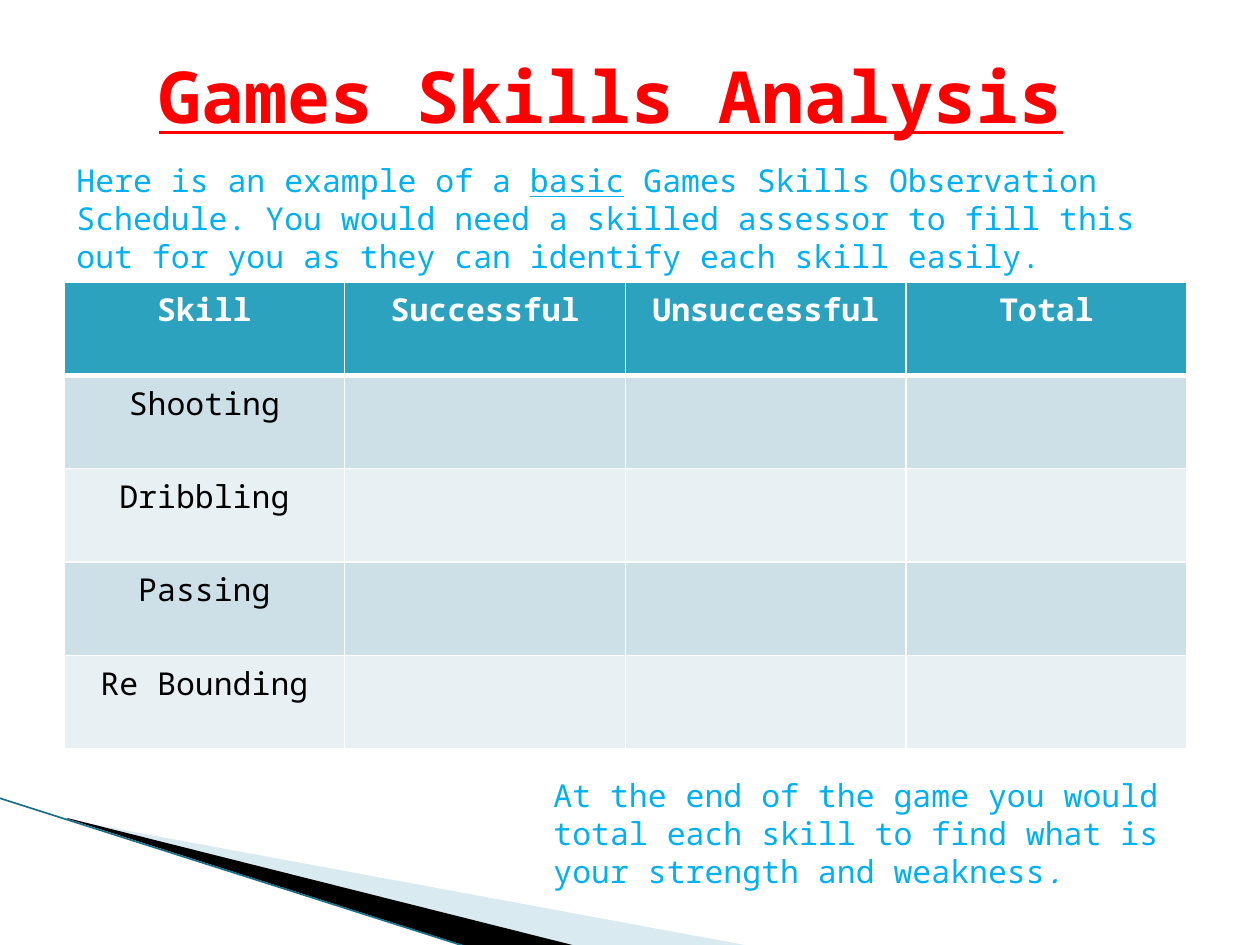
from lxml.etree import SubElement
from pptx import Presentation
from pptx.dml.color import RGBColor
from pptx.enum.shapes import MSO_CONNECTOR
from pptx.enum.text import MSO_ANCHOR, MSO_AUTO_SIZE, PP_ALIGN
from pptx.oxml import parse_xml
from pptx.oxml.ns import nsdecls, qn
from pptx.util import Pt

PX = 914400 / 126
FONT = "Noto Sans Mono"
RED = RGBColor(0xFF, 0x00, 0x00)
SKY = RGBColor(0x00, 0xB0, 0xF0)
WHITE = RGBColor(0xFF, 0xFF, 0xFF)
BLACK = RGBColor(0x00, 0x00, 0x00)
TEAL = RGBColor(0x2D, 0xA2, 0xBF)
DARK_TEAL = RGBColor(0x1A, 0x6F, 0x86)
PALE_BLUE = RGBColor(0xA0, 0xCB, 0xDC)
BAND_DARK = RGBColor(0xCD, 0xE0, 0xE8)
BAND_LIGHT = RGBColor(0xE8, 0xF0, 0xF4)


def px(*lengths):
    """Turn pixel lengths into a list of EMU."""
    return [round(length * PX) for length in lengths]


def add_text(paragraph, text, size=18, color=SKY, bold=False, italic=False,
             underline=False, align=PP_ALIGN.LEFT):
    paragraph.alignment = align
    run = paragraph.add_run()
    run.text = text
    font = run.font
    font.name, font.size, font.color.rgb = FONT, Pt(size), color
    font.bold, font.italic, font.underline = bold, italic, underline


prs = Presentation()
prs.slide_width, prs.slide_height = px(1260, 945)
slide = prs.slides.add_slide(prs.slide_layouts[5])
shapes = slide.shapes

# Corner wedges
wedges = [
    ([(69, 820), (750, 946), (575, 946), (69, 819)], PALE_BLUE, 40),
    ([(67, 818), (576, 946), (469, 947), (68, 819)], BLACK, 100),
]
for points, color, opacity in wedges:
    builder = shapes.build_freeform(*points[0], scale=PX)
    builder.add_line_segments(points[1:], close=True)
    wedge = builder.convert_to_shape()
    wedge.shadow.inherit = False
    wedge.line.fill.background()
    wedge.fill.solid()
    wedge.fill.fore_color.rgb = color
    if opacity < 100:
        srgb = wedge.fill._xPr.find(".//" + qn("a:srgbClr"))
        SubElement(srgb, qn("a:alpha"), val=str(opacity * 1000))

edge = shapes.add_connector(MSO_CONNECTOR.STRAIGHT, *px(-1, 798, 467, 947))
edge.line.color.rgb = DARK_TEAL
edge.line.width = Pt(0.95)
SubElement(edge._element.spPr, qn("a:effectLst"))

# Observation schedule
headings = ["Skill", "Successful", "Unsuccessful", "Total"]
skills = ["Shooting", "Dribbling", "Passing", "Re Bounding"]
rows = [headings] + [[skill, "", "", ""] for skill in skills]
schedule = shapes.add_table(len(rows), len(headings), *px(64, 282, 1123, 467)).table
for r, row in enumerate(rows):
    is_heading = r == 0
    fill = TEAL if is_heading else (BAND_LIGHT, BAND_DARK)[r % 2]
    for c, label in enumerate(row):
        cell = schedule.cell(r, c)
        cell.fill.solid()
        cell.fill.fore_color.rgb = fill
        if label:
            add_text(cell.text_frame.paragraphs[0], label, bold=is_heading,
                     color=WHITE if is_heading else BLACK, align=PP_ALIGN.CENTER)
        widths = {"lnL": 1, "lnR": 1, "lnT": 3 if r == 1 else 1, "lnB": 3 if is_heading else 1}
        for position, (side, width) in enumerate(widths.items()):
            cell._tc.get_or_add_tcPr().insert(position, parse_xml(
                f'<a:{side} {nsdecls("a")} w="{Pt(width)}"><a:solidFill>'
                f'<a:srgbClr val="{WHITE}"/></a:solidFill></a:{side}>'))

# Title
title = shapes.title
title.left, title.top, title.width, title.height = px(44, 16, 1134, 158)
title.text_frame.auto_size = MSO_AUTO_SIZE.NONE
title.text_frame.vertical_anchor = MSO_ANCHOR.MIDDLE
add_text(title.text_frame.paragraphs[0], "Games Skills Analysis", size=41, color=RED,
         bold=True, underline=True, align=PP_ALIGN.CENTER)

# Notes above and below the schedule
remarks = [
    ((64, 155, 1142, 127), [
        ("Here is an example of a ", {}),
        ("basic", {"underline": True}),
        (" Games Skills Observation Schedule. You would need a skilled assessor "
         "to fill this out for you as they can identify each skill easily.", {}),
    ]),
    ((541, 770, 694, 127), [
        ("At the end of the game you would total each skill to find what is "
         "your strength and weakness", {}),
        (".", {"italic": True}),
    ]),
]
for box, pieces in remarks:
    frame = shapes.add_textbox(*px(*box)).text_frame
    frame.word_wrap = True
    frame.auto_size = MSO_AUTO_SIZE.SHAPE_TO_FIT_TEXT
    for text, style in pieces:
        add_text(frame.paragraphs[0], text, **style)

prs.save("out.pptx")
